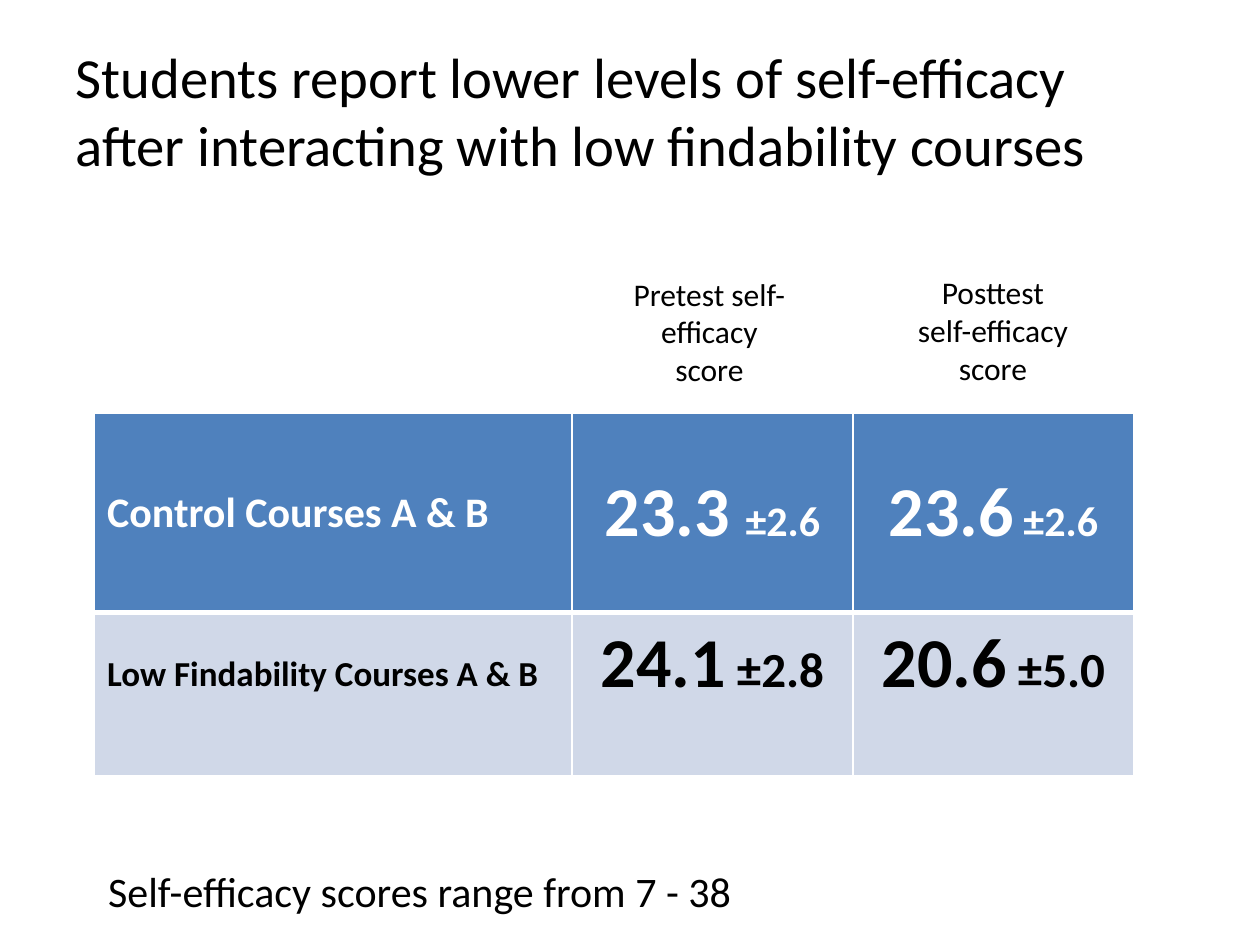
from lxml import etree
from pptx import Presentation
from pptx.dml.color import RGBColor
from pptx.enum.text import MSO_ANCHOR, PP_ALIGN
from pptx.oxml.ns import qn
from pptx.util import Pt

MIDDLE = MSO_ANCHOR.MIDDLE
LEFT, CENTER = PP_ALIGN.LEFT, PP_ALIGN.CENTER
FONT = "Calibri"
BLACK, WHITE = "000000", "FFFFFF"

TITLE = ("Students report lower levels of self-efficacy "
         "after interacting with low findability courses")
HEADINGS = [("Pretest self-efficacy score", 354.24, 153.36),
            ("Posttest self-efficacy score", 516.24, 152.64)]
RANGE_NOTE = "Self-efficacy scores range from 7 - 38"
COLUMN_WIDTHS = [272.88, 160.56, 160.56]
COURSES = [
    {"cells": [[("Control Courses A & B", 24)],
               [("23.3 ", 40), ("±2.6", 24)],
               [("23.6", 40), (" ±2.6", 24)]],
     "height": 113.76, "fill": "4F81BD", "color": WHITE,
     "rule": 3, "bottoms": [3.6, 3.6, 3.6]},
    {"cells": [[("Low Findability Courses A & B", 20)],
               [("24.1", 40), (" ±2.8", 28)],
               [("20.6", 40), (" ±5.0", 28)]],
     "height": 93.6, "fill": "D0D8E8", "color": BLACK,
     "rule": 1, "bottoms": [26, 39, 39]},
]


def rgb(value):
    """Turn a hex string into a colour."""
    return RGBColor.from_string(value)


def write(frame, pieces, color, align=LEFT, bold=False):
    """Fill the first paragraph with (text, size) pieces."""
    paragraph = frame.paragraphs[0]
    paragraph.alignment = align
    for text, size in pieces:
        run = paragraph.add_run()
        run.text = text
        run.font.name, run.font.size, run.font.bold = FONT, Pt(size), bold
        run.font.color.rgb = rgb(color)


def add_label(slide, text, size, box, align=LEFT, wrap=True):
    """Add a plain text box."""
    frame = slide.shapes.add_textbox(*map(Pt, box)).text_frame
    frame.word_wrap = wrap
    write(frame, [(text, size)], BLACK, align)


def set_borders(cell, widths):
    """Give a cell white borders, in left, right, top, bottom order."""
    properties = cell._tc.get_or_add_tcPr()
    for index, (side, width) in enumerate(zip("LRTB", widths)):
        line = etree.Element(qn(f"a:ln{side}"), w=str(Pt(width)))
        fill = etree.SubElement(line, qn("a:solidFill"))
        etree.SubElement(fill, qn("a:srgbClr"), val=WHITE)
        properties.insert(index, line)


def add_scores(slide):
    """Add the table of course scores."""
    table = slide.shapes.add_table(
        len(COURSES), len(COLUMN_WIDTHS), Pt(54), Pt(236.16),
        Pt(sum(COLUMN_WIDTHS)), Pt(sum(c["height"] for c in COURSES))).table
    for column, width in zip(table.columns, COLUMN_WIDTHS):
        column.width = Pt(width)
    top_rule = 1
    for row, course in zip(table.rows, COURSES):
        row.height = Pt(course["height"])
        for index, (cell, pieces) in enumerate(zip(row.cells, course["cells"])):
            cell.fill.solid()
            cell.fill.fore_color.rgb = rgb(course["fill"])
            cell.vertical_anchor = MIDDLE
            cell.margin_bottom = Pt(course["bottoms"][index])
            set_borders(cell, (1, 1, top_rule, course["rule"]))
            write(cell.text_frame, pieces, course["color"],
                  CENTER if index else LEFT, bold=True)
        top_rule = course["rule"]


def main():
    """Build and save the slide."""
    deck = Presentation()
    deck.slide_width, deck.slide_height = Pt(720), Pt(540)
    slide = deck.slides.add_slide(deck.slide_layouts[5])
    title = slide.shapes.title
    title.left, title.top, title.width, title.height = map(Pt, (36, 18, 648, 90))
    title.text_frame.vertical_anchor = MIDDLE
    write(title.text_frame, [(TITLE, 32.4)], BLACK)
    add_scores(slide)
    for text, left, top in HEADINGS:
        add_label(slide, text, 18, (left, top, 102.24, 72.72), CENTER)
    add_label(slide, RANGE_NOTE, 24, (54.72, 491.04, 375.12, 36), wrap=False)
    deck.save("out.pptx")


if __name__ == "__main__":
    main()
